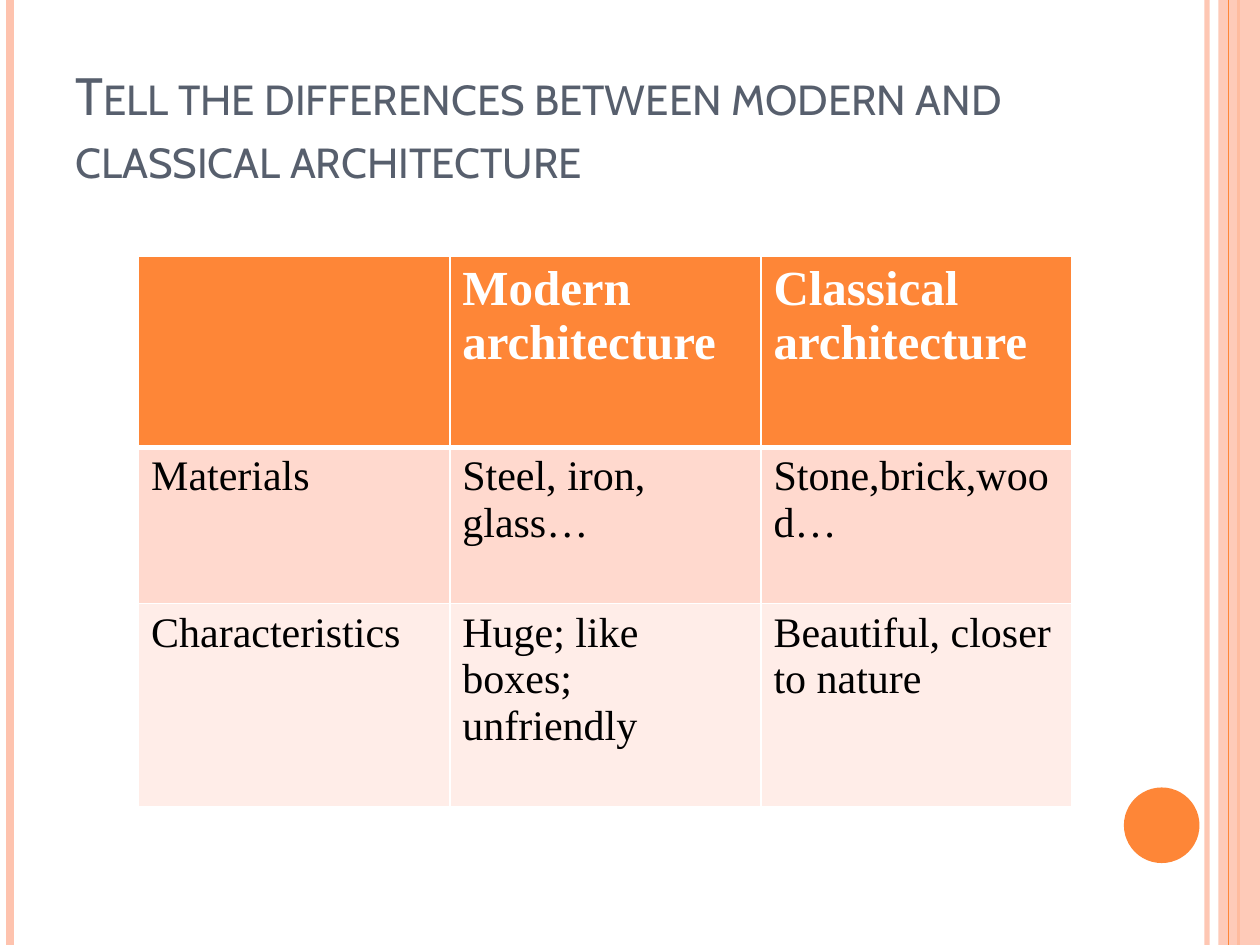
from lxml import etree
from pptx import Presentation
from pptx.dml.color import RGBColor
from pptx.enum.shapes import MSO_CONNECTOR, MSO_SHAPE
from pptx.enum.text import MSO_ANCHOR
from pptx.oxml.ns import qn
from pptx.util import Inches, Pt

LINE = MSO_CONNECTOR.STRAIGHT
RECT, OVAL = MSO_SHAPE.RECTANGLE, MSO_SHAPE.OVAL
BOTTOM = MSO_ANCHOR.BOTTOM

ORANGE, PEACH, WHITE = "FE8637", "FEC3AE", "FFFFFF"
WIDE, TALL = 10, 7.5

# Content
TITLE = "Tell the differences between modern and \vclassical architecture"
ROWS = [
    ["", "Modern architecture", "Classical architecture"],
    ["Materials", "Steel, iron, glass…", "Stone,brick,wood…"],
    ["Characteristics", "Huge; like boxes; unfriendly", "Beautiful, closer to nature"],
]
FILLS = [ORANGE, "FFD9CE", "FFEDE8"]
HEIGHTS = [1.52, 1.24, 1.61]
COL = 2.47

# Side decoration, back to front: x, colour, points, opacity in percent
BACK = [(9.58, PEACH, 3, 93), (0.08, PEACH, 4.5, 100), (9.83, ORANGE, 1.5, 100)]
FRONT = [(9.75, ORANGE, 0.75, 100)]

HEAD = {"name": "Times New Roman", "size": Pt(28), "bold": True}
BODY = {"name": "Times New Roman", "size": Pt(24), "bold": False}
TOP = {"name": "Cabin", "size": Pt(30)}


def rgb(code):
    return RGBColor.from_string(code)


def style(font, form, color):
    for key, value in form.items():
        setattr(font, key, value)
    font.color.rgb = rgb(color)


def paint(fill, color, alpha=100):
    fill.solid()
    fill.fore_color.rgb = rgb(color)
    if alpha < 100:
        node = fill._xPr.find(qn("a:solidFill"))[0]
        etree.SubElement(node, qn("a:alpha"), val=str(alpha * 1000))


def stripe(shapes, x, color, width, alpha):
    line = shapes.add_connector(LINE, Inches(x), 0, Inches(x), Inches(TALL))
    line.line.width = Pt(width)
    paint(line.line.fill, color, alpha)
    etree.SubElement(line._element.spPr, qn("a:effectLst"))


def block(shapes, kind, box, color, alpha=100):
    shape = shapes.add_shape(kind, *map(Inches, box))
    shape.shadow.inherit = False
    shape.line.fill.background()
    paint(shape.fill, color, alpha)


def border(cell, head):
    props = cell._tc.get_or_add_tcPr()
    for i, side in enumerate(("lnL", "lnR", "lnT", "lnB")):
        wide = 3 if head and side == "lnB" else 1
        edge = etree.Element(qn("a:" + side), w=str(Pt(wide)))
        fill = etree.SubElement(edge, qn("a:solidFill"))
        etree.SubElement(fill, qn("a:srgbClr"), val=WHITE)
        props.insert(i, edge)


def main():
    deck = Presentation()
    deck.slide_width, deck.slide_height = Inches(WIDE), Inches(TALL)
    shapes = deck.slides.add_slide(deck.slide_layouts[6]).shapes

    # Stripes, side band and dot
    for item in BACK:
        stripe(shapes, *item)
    block(shapes, RECT, (9.67, 0, 0.33, TALL), PEACH, 87)
    for item in FRONT:
        stripe(shapes, *item)
    block(shapes, OVAL, (8.92, 6.25, 0.6, 0.6), ORANGE)

    # Title in small capitals
    frame = shapes.add_textbox(*map(Inches, (0.5, 0.3, 8.17, 1.25))).text_frame
    frame.word_wrap = True
    frame.vertical_anchor = BOTTOM
    frame.text = TITLE
    for run in frame.paragraphs[0].runs:
        style(run.font, TOP, "575F6D")
        run.font._element.set("cap", "small")

    # Comparison table
    box = (1.1, 2.03, COL * len(ROWS[0]), sum(HEIGHTS))
    table = shapes.add_table(len(ROWS), len(ROWS[0]), *map(Inches, box)).table
    for col in table.columns:
        col.width = Inches(COL)
    for r, texts in enumerate(ROWS):
        table.rows[r].height = Inches(HEIGHTS[r])
        head = r == 0
        for c, text in enumerate(texts):
            cell = table.cell(r, c)
            cell.text = text
            paint(cell.fill, FILLS[r])
            border(cell, head)
            for run in cell.text_frame.paragraphs[0].runs:
                style(run.font, HEAD if head else BODY, WHITE if head else "000000")

    deck.save("out.pptx")


if __name__ == "__main__":
    main()
